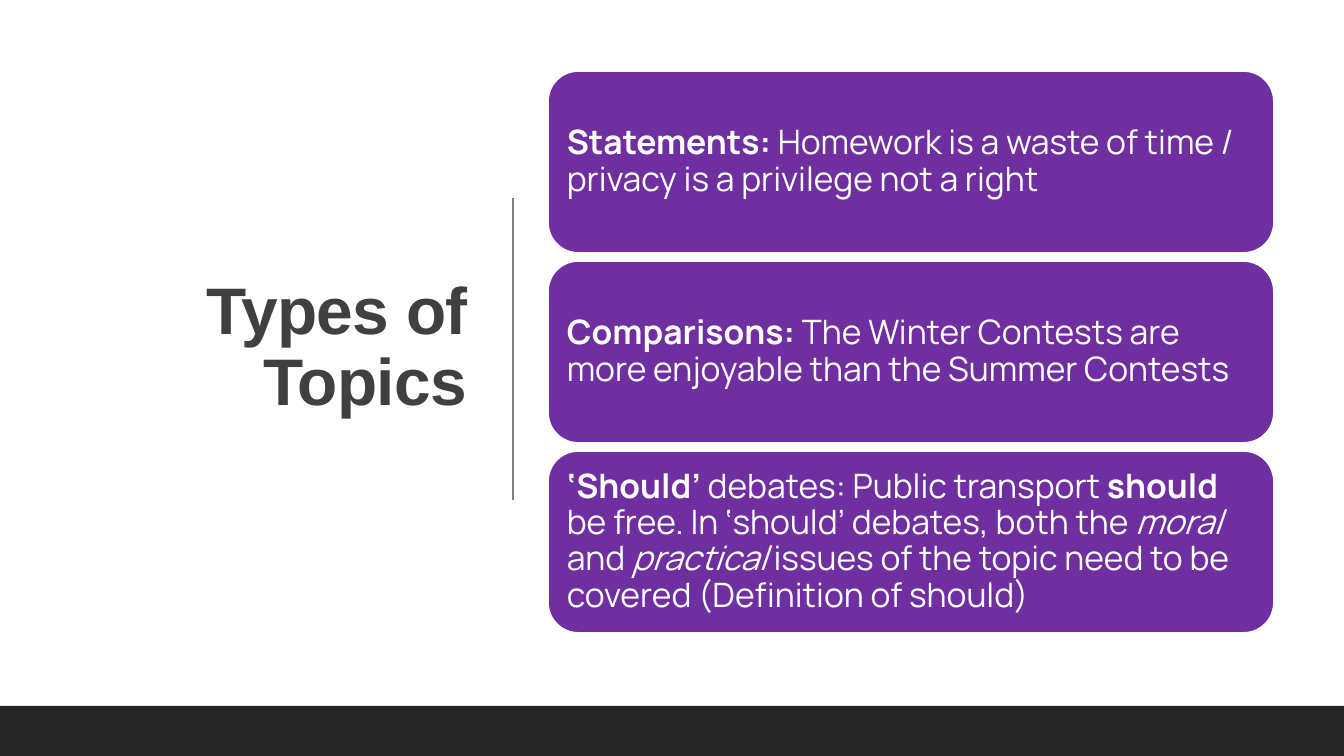
"""Build the "Types of Topics" slide with three debate-topic cards."""
from dataclasses import dataclass

from lxml import etree
from pptx import Presentation
from pptx.dml.color import RGBColor
from pptx.enum.shapes import MSO_CONNECTOR, MSO_SHAPE
from pptx.enum.text import MSO_ANCHOR, MSO_AUTO_SIZE, PP_ALIGN
from pptx.oxml.ns import qn
from pptx.util import Emu, Pt

STRAIGHT = MSO_CONNECTOR.STRAIGHT
RECTANGLE = MSO_SHAPE.RECTANGLE
ROUNDED = MSO_SHAPE.ROUNDED_RECTANGLE
MIDDLE = MSO_ANCHOR.MIDDLE
NO_FIT = MSO_AUTO_SIZE.NONE
LEFT, RIGHT = PP_ALIGN.LEFT, PP_ALIGN.RIGHT

PAGE_WIDTH, PAGE_HEIGHT = 1344, 756
EMU_PER_PX = 914400 / 100.8
TITLE_ONLY = 5
CARD_TOP, CARD_PITCH, CARD_HEIGHT = 71, 190, 182

CARDS = [
    [("Statements: ", "bold"),
     ("Homework is a waste of time / privacy is a privilege not a right", "")],
    [("Comparisons: ", "bold"),
     ("The Winter Festival are more enjoyable than the Summer Festival".replace("Festival", "Contests"), "")],
    [("‘Should’ ", "bold"), ("debates: Public transport ", ""),
     ("should ", "bold"), ("be free. In ‘should’ debates, both the ", ""),
     ("moral ", "italic"), ("and ", ""), ("practical ", "italic"),
     ("issues of the topic need to be covered (Definition of should)", "")],
]
CARDS[1][1] = ("The Winter Contests are more enjoyable than the Summer Contests", "")


def px(length):
    """Turn pixels into EMU."""
    return Emu(round(length * EMU_PER_PX))


@dataclass(frozen=True)
class Theme:
    """Colours, fonts and type sizes."""
    white: RGBColor = RGBColor.from_string("FFFFFF")
    purple: RGBColor = RGBColor.from_string("702FA0")
    dark: RGBColor = RGBColor.from_string("262626")
    grey: RGBColor = RGBColor.from_string("808080")
    heading: RGBColor = RGBColor.from_string("404040")
    title_font: str = "Arial"
    body_font: str = "Manrope"
    title_size: float = 47
    body_size: float = 24


class PageBuilder:
    """Draws themed elements on one page."""

    def __init__(self, page, theme):
        """Keep the page and theme, and paint the background."""
        self.page, self.theme = page, theme
        page.background.fill.solid()
        page.background.fill.fore_color.rgb = theme.white

    def title(self, text, left, top, width, height):
        """Place the right-aligned title."""
        box = self.page.shapes.title
        box.left, box.top, box.width, box.height = map(px, (left, top, width, height))
        frame = box.text_frame
        frame.text = text
        frame.auto_size, frame.vertical_anchor = NO_FIT, MIDDLE
        para = frame.paragraphs[0]
        para.alignment, para.line_spacing = RIGHT, 0.9
        font = para.font
        font.name, font.size, font.bold = self.theme.title_font, Pt(self.theme.title_size), True
        font.color.rgb = self.theme.heading
        para.runs[0].font._element.set("spc", "-50")

    def block(self, preset, fill, left, top, width, height):
        """Add a filled shape without an outline."""
        box = self.page.shapes.add_shape(preset, *map(px, (left, top, width, height)))
        box.shadow.inherit = False
        box.fill.solid()
        box.fill.fore_color.rgb = fill
        box.line.fill.background()
        return box

    def card(self, spans, left, top, width, height):
        """Add a rounded card with mixed bold and italic text."""
        box = self.block(ROUNDED, self.theme.purple, left, top, width, height)
        box.line.color.rgb, box.line.width = self.theme.white, Pt(1.25)
        frame = box.text_frame
        frame.word_wrap, frame.vertical_anchor = True, MIDDLE
        frame.margin_left = frame.margin_right = px(10)
        frame.margin_top = frame.margin_bottom = px(10)
        para = frame.paragraphs[0]
        para.alignment, para.line_spacing = LEFT, 0.9
        para.font.name, para.font.size = self.theme.body_font, Pt(self.theme.body_size)
        para.font.color.rgb = self.theme.white
        for text, style in spans:
            span = para.add_run()
            span.text = text
            span.font.bold = style == "bold"
            span.font.italic = style == "italic"

    def divider(self, x, top, bottom):
        """Add a thin vertical line."""
        line = self.page.shapes.add_connector(STRAIGHT, *map(px, (x, top, x, bottom)))
        line.line.color.rgb, line.line.width = self.theme.grey, Pt(1)
        etree.SubElement(line._element.spPr, qn("a:effectLst"))


def main():
    """Build and save the deck."""
    deck = Presentation()
    deck.slide_width, deck.slide_height = px(PAGE_WIDTH), px(PAGE_HEIGHT)
    theme = Theme()
    builder = PageBuilder(deck.slides.add_slide(deck.slide_layouts[TITLE_ONLY]), theme)
    builder.title("Types of Topics", 71, 70, 406, 557)
    builder.divider(513, 198, 500)
    builder.block(RECTANGLE, theme.dark, 0, 706, PAGE_WIDTH, 50)
    for index, spans in enumerate(CARDS):
        builder.card(spans, 548, CARD_TOP + index * CARD_PITCH, 726, CARD_HEIGHT)
    deck.save("out.pptx")


if __name__ == "__main__":
    main()
